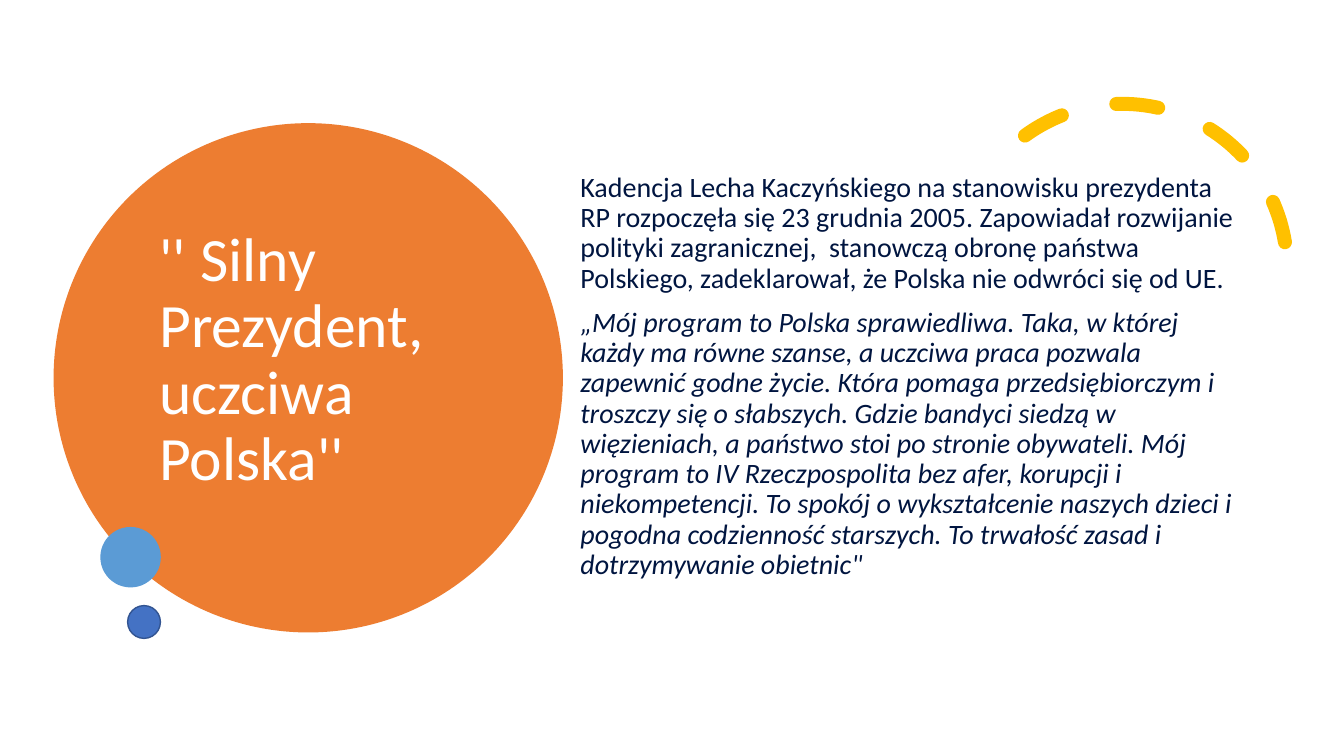
from dataclasses import dataclass

from pptx import Presentation
from pptx.dml.color import RGBColor
from pptx.enum import dml, shapes, text
from pptx.oxml import ns
from pptx.util import Pt

WHITE = RGBColor(0xFF, 0xFF, 0xFF)
NAVY = RGBColor(0x00, 0x15, 0x40)
ORANGE = RGBColor(0xED, 0x7D, 0x31)
LIGHT_BLUE = RGBColor(0x5B, 0x9B, 0xD5)
BLUE = RGBColor(0x44, 0x72, 0xC4)
DARK_BLUE = RGBColor(0x32, 0x54, 0x91)
GOLD = RGBColor(0xFF, 0xC0, 0x00)

TITLE = "'' Silny Prezydent, uczciwa Polska''"
TERM = (
    "Kadencja Lecha Kaczyńskiego na stanowisku prezydenta RP rozpoczęła się "
    "23 grudnia 2005. Zapowiadał rozwijanie polityki zagranicznej,  stanowczą "
    "obronę państwa Polskiego, zadeklarował, że Polska nie odwróci się od UE."
)
QUOTE = (
    "„Mój program to Polska sprawiedliwa. Taka, w której każdy ma równe szanse, "
    "a uczciwa praca pozwala zapewnić godne życie. Która pomaga przedsiębiorczym "
    "i troszczy się o słabszych. Gdzie bandyci siedzą w więzieniach, a państwo "
    "stoi po stronie obywateli. Mój program to IV Rzeczpospolita bez afer, "
    "korupcji i niekompetencji. To spokój o wykształcenie naszych dzieci i "
    "pogodna codzienność starszych. To trwałość zasad i dotrzymywanie obietnic\""
)


@dataclass(frozen=True)
class Disc:
    left: float
    top: float
    size: float
    fill: RGBColor
    line: RGBColor | None = None
    kind: shapes.MSO_SHAPE = shapes.MSO_SHAPE.OVAL


BIG_DISC = Disc(38.3, 88, 363.8, ORANGE)
SMALL_DISCS = (
    Disc(71.7, 376.4, 43.2, LIGHT_BLUE),
    Disc(91.2, 432.6, 23.4, BLUE, DARK_BLUE, shapes.MSO_SHAPE.FLOWCHART_CONNECTOR),
)


def add_disc(s, disc: Disc):
    sp = s.shapes.add_shape(disc.kind, Pt(disc.left), Pt(disc.top),
                            Pt(disc.size), Pt(disc.size))
    sp.shadow.inherit = False
    sp.fill.solid()
    sp.fill.fore_color.rgb = disc.fill
    if disc.line is None:
        sp.line.fill.background()
    else:
        sp.line.color.rgb = disc.line
        sp.line.width = Pt(1)
    return sp


def add_dashed_arc(s) -> None:
    sp = s.shapes.add_shape(shapes.MSO_SHAPE.ARC, Pt(684), Pt(74.2), Pt(235.4), Pt(235.4))
    sp.shadow.inherit = False
    sp.rotation = 330.2
    sp.adjustments[0] = 158.17
    sp.adjustments[1] = 17.81
    sp.fill.background()
    sp.line.color.rgb = GOLD
    sp.line.width = Pt(10)
    sp.line.dash_style = dml.MSO_LINE.DASH
    sp.element.spPr.find(ns.qn("a:ln")).set("cap", "rnd")


def write_paragraph(p, content: str, *, size: float, color: RGBColor,
                    before: float = 0, italic: bool = False) -> None:
    p.alignment = text.PP_ALIGN.LEFT
    p.line_spacing = 0.9
    p.space_before = Pt(before)
    r = p.add_run()
    r.text = content
    r.font.name = "Calibri"
    r.font.size = Pt(size)
    r.font.color.rgb = color
    r.font.italic = italic


def format_frame(tf, anchor: text.MSO_ANCHOR) -> None:
    tf.word_wrap = True
    tf.auto_size = text.MSO_AUTO_SIZE.NONE
    tf.vertical_anchor = anchor


def main() -> None:
    prs = Presentation()
    prs.slide_width, prs.slide_height = Pt(960), Pt(540)
    s = prs.slides.add_slide(prs.slide_layouts[5])

    title = s.shapes.title
    title.left, title.top, title.width, title.height = Pt(106.6), Pt(110.9), Pt(295.2), Pt(293.8)
    format_frame(title.text_frame, text.MSO_ANCHOR.MIDDLE)
    write_paragraph(title.text_frame.paragraphs[0], TITLE, size=44, color=WHITE)

    big_disc = add_disc(s, BIG_DISC)
    title.element.addprevious(big_disc.element)  # keeps the title in front
    add_dashed_arc(s)
    for disc in SMALL_DISCS:
        add_disc(s, disc)

    body = s.shapes.add_textbox(Pt(407.5), Pt(120.2), Pt(486.7), Pt(340.6))
    tf = body.text_frame
    format_frame(tf, text.MSO_ANCHOR.TOP)
    write_paragraph(tf.paragraphs[0], TERM, size=20, color=NAVY, before=10)
    write_paragraph(tf.add_paragraph(), QUOTE, size=20, color=NAVY, before=10, italic=True)

    prs.save("out.pptx")


if __name__ == "__main__":
    main()
